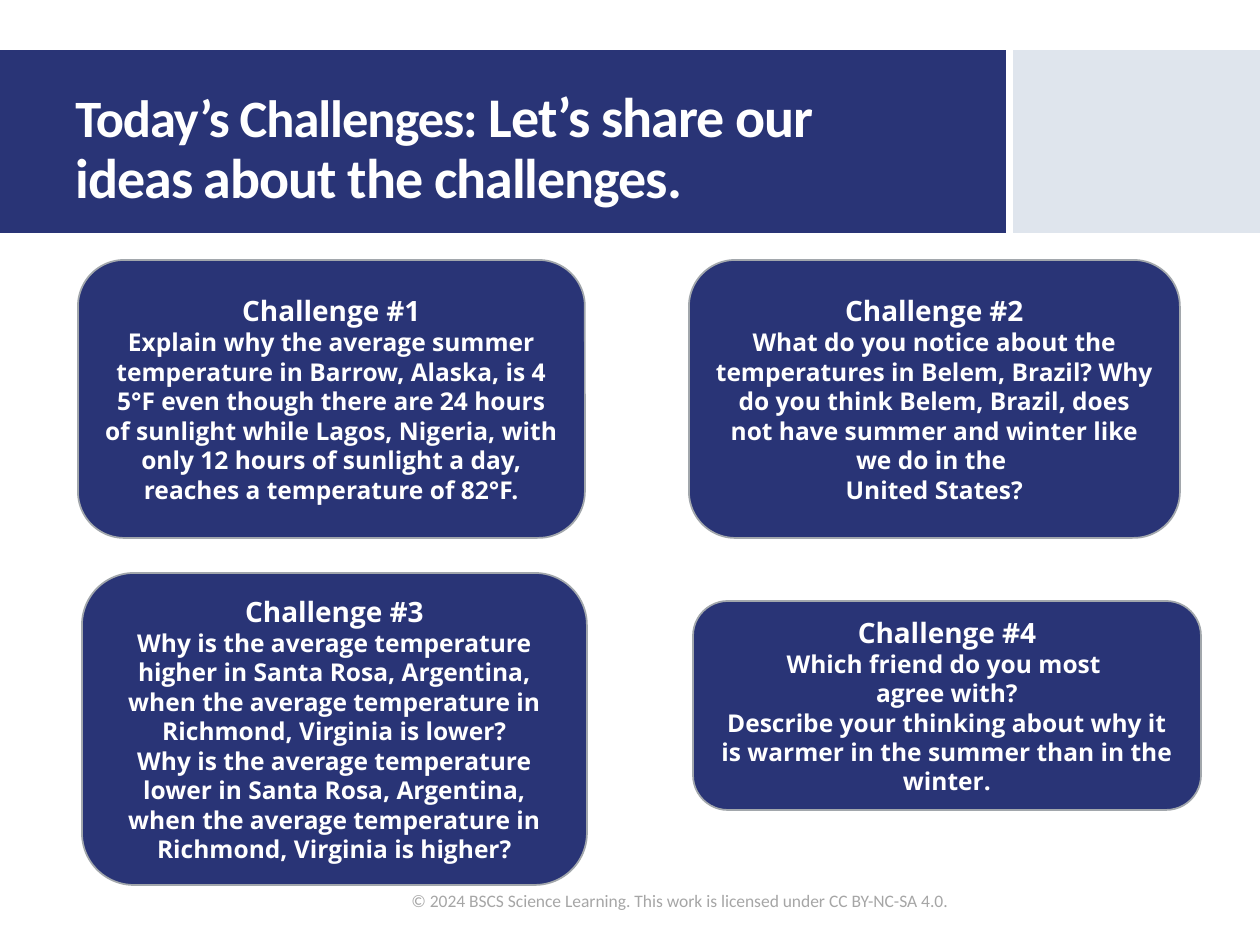
"""Build the slide of four challenge cards under a title band."""
from dataclasses import dataclass
from typing import Any

from lxml import etree
from pptx import Presentation
from pptx import util as u
from pptx.dml.color import RGBColor
from pptx.enum import shapes, text

NAVY = RGBColor(0x29, 0x34, 0x76)
MIST = RGBColor(0xDF, 0xE5, 0xED)
EDGE = RGBColor(0xA2, 0xA7, 0xAC)
GREY = RGBColor(0xA6, 0xA6, 0xA6)
WHITE = RGBColor(0xFF, 0xFF, 0xFF)

CHALLENGES = [
    ("Challenge #1", (78, 260, 507, 278), [
        "Explain why the average summer temperature in Barrow, Alaska, is "
        "4 5°F even though there are 24 hours of sunlight while Lagos, Nigeria, "
        "with only 12 hours of sunlight a day, reaches a temperature of 82°F."]),
    ("Challenge #2", (689, 260, 491, 278), [
        "What do you notice about the temperatures in Belem, Brazil? Why do you "
        "think Belem, Brazil, does not have summer and winter like we do in the \v"
        "United States?"]),
    ("Challenge #3", (82, 573, 505, 312), [
        f"Why is the average temperature {here} in Santa Rosa, Argentina, when "
        f"the average temperature in Richmond, Virginia is {there}?"
        for here, there in (("higher", "lower"), ("lower", "higher"))]),
    ("Challenge #4", (693, 601, 508, 209), [
        "Which friend do you most \vagree with?",
        "Describe your thinking about why it is warmer in the summer than in the "
        "winter."]),
]


@dataclass
class Deck:
    """Slide under construction, with its fonts and pixel scale."""
    slide: Any
    title_font: str = "Calibri"
    card_font: str = "Open Sans"

    def px(self, *lengths):
        return [u.Emu(round(n * 914400 / 126)) for n in lengths]

    def style(self, font, name, size, color, bold):
        font.name, font.size, font.bold = name, u.Pt(size), bold
        font.color.rgb = color

    def panel(self, kind, box, fill, edge=None):
        panel = self.slide.shapes.add_shape(kind, *self.px(*box))
        panel.shadow.inherit = False
        panel.fill.solid()
        panel.fill.fore_color.rgb = fill
        if edge is None:
            panel.line.fill.background()
        else:
            panel.line.color.rgb = edge
            panel.line.width = u.Pt(1)
        return panel

    def text_frame(self, box):
        frame = self.slide.shapes.add_textbox(*self.px(*box)).text_frame
        frame.word_wrap = True
        frame.vertical_anchor = text.MSO_ANCHOR.MIDDLE
        return frame

    def title(self, box, parts):
        heading = self.text_frame(box).paragraphs[0]
        heading.line_spacing = 0.9
        for words, size in parts:
            part = heading.add_run()
            part.text = words
            self.style(part.font, self.title_font, size, WHITE, True)
            part.font._element.set("spc", "-60")

    def card(self, heading, box, body):
        card = self.panel(shapes.MSO_SHAPE.ROUNDED_RECTANGLE, box, NAVY, EDGE)
        frame = card.text_frame
        frame.word_wrap = True
        frame.vertical_anchor = text.MSO_ANCHOR.MIDDLE
        frame.text = "\n".join([heading, *body])
        for index, paragraph in enumerate(frame.paragraphs):
            paragraph.alignment = text.PP_ALIGN.CENTER
            self.style(paragraph.font, self.card_font, 14 if index else 16, WHITE, True)

    def footer(self, box, words):
        credit = self.text_frame(box).paragraphs[0]
        credit.text = words
        self.style(credit.font, self.title_font, 10, GREY, False)


def main():
    presentation = Presentation()
    presentation.slide_width, presentation.slide_height = u.Inches(10), u.Inches(7.5)
    deck = Deck(presentation.slides.add_slide(presentation.slide_layouts[6]))
    deck.panel(shapes.MSO_SHAPE.RECTANGLE, (0, 50, 1006, 183), NAVY)
    deck.panel(shapes.MSO_SHAPE.RECTANGLE, (1013, 50, 247, 183), MIST)
    deck.title((63, 73, 873, 154), [
        ("Today’s Challenges: ", 30),
        ("Let’s share our ideas about the challenges.", 32)])
    for heading, box, body in CHALLENGES:
        deck.card(heading, box, body)
    deck.footer((399, 876, 611, 50),
                "© 2024 BSCS Science Learning. This work is licensed under CC BY-NC-SA 4.0.")
    presentation.save("out.pptx")


if __name__ == "__main__":
    main()
